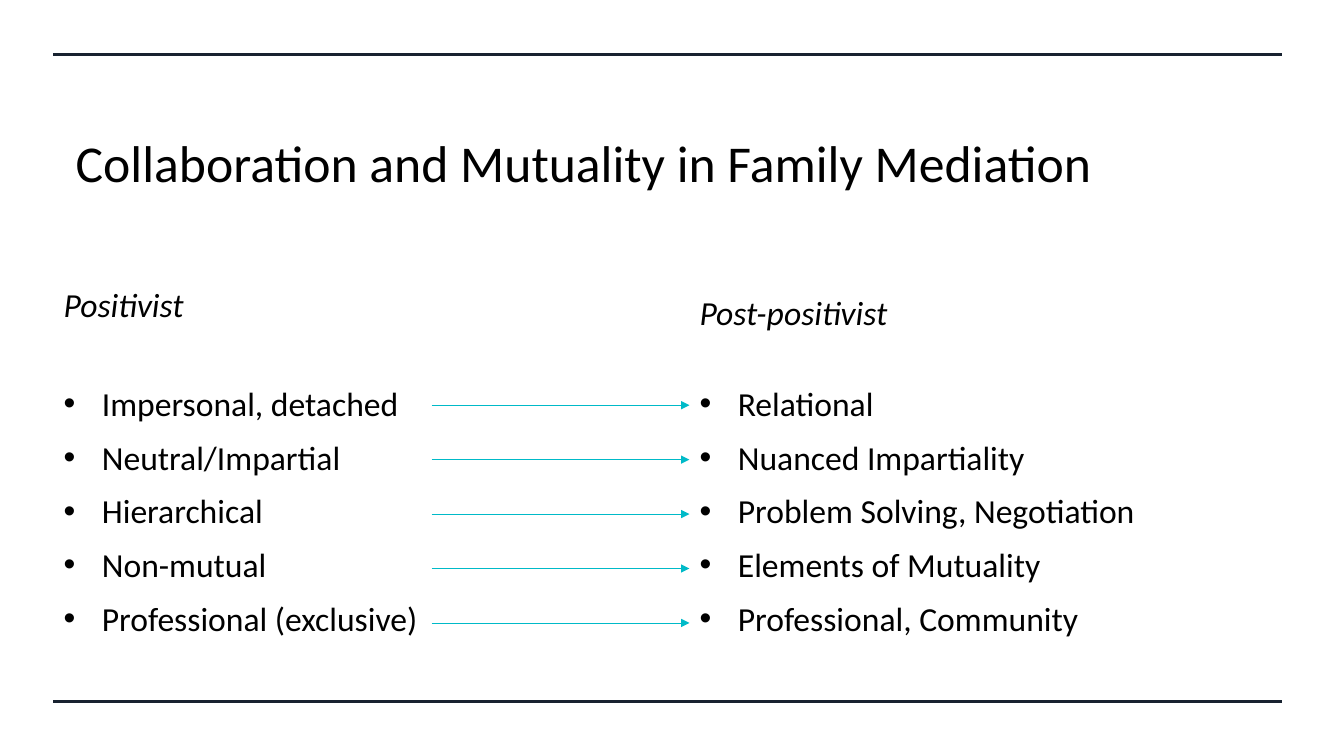
"""Build the slide comparing positivist and post-positivist family mediation."""
from lxml import etree
from pptx import Presentation, util as u
from pptx.dml.color import RGBColor
from pptx.enum import shapes, text
from pptx.oxml.ns import qn

INK = {"text": "000000", "rule": "182230", "arrow": "00BAC8"}
LEFT, RIGHT, END = 3.98, 51.3, 95.42
HEAD, LIST = 12, 40.27

deck = Presentation()
deck.slide_width, deck.slide_height = u.Inches(13.33), u.Inches(7.5)
col, row = deck.slide_width / 100, deck.slide_height / 100
slide = deck.slides.add_slide(deck.slide_layouts[4])
holes = {hole.placeholder_format.idx: hole for hole in slide.placeholders}


def write(hole, box, lines, size, slant=False, mark=False):
    x, y, wide, high = box
    hole.left, hole.top = int(x * col), int(y * row)
    hole.width, hole.height = int(wide * col), int(high * row)
    frame = hole.text_frame
    frame.word_wrap = True
    frame.auto_size = text.MSO_AUTO_SIZE.NONE
    frame.vertical_anchor = text.MSO_ANCHOR.TOP
    for i, line in enumerate(lines):
        para = frame.add_paragraph() if i else frame.paragraphs[0]
        if mark:
            props = para._p.get_or_add_pPr()
            props.set("marL", str(u.Inches(0.38)))
            props.set("indent", str(-u.Inches(0.38)))
            etree.SubElement(props, qn("a:buFont")).set("typeface", "Arial")
            etree.SubElement(props, qn("a:buChar")).set("char", "•")
        para.alignment = text.PP_ALIGN.LEFT
        para.space_before = u.Pt(9.5 if i else 0)
        run = para.add_run()
        run.text = line
        font = run.font
        font.name, font.size = "Calibri", u.Pt(size)
        font.bold, font.italic = False, slant
        font.color.rgb = RGBColor.from_string(INK["text"])
    return frame


def rule(x, end, y, tint, thick):
    line = slide.shapes.add_connector(
        shapes.MSO_CONNECTOR.STRAIGHT,
        int(x * col), int(y * row), int(end * col), int(y * row))
    line.line.color.rgb = RGBColor.from_string(INK[tint])
    line.line.width = u.Pt(thick)
    etree.SubElement(line._element.spPr, qn("a:effectLst"))
    return line


for y in (7.2, 92.8):
    rule(LEFT, END, y, "rule", 2.25)

title = write(holes[0], (LEFT, 14.27, END - LEFT, 19.47),
              ["Collaboration and Mutuality in Family Mediation"], 36.9)
title.vertical_anchor = text.MSO_ANCHOR.BOTTOM
title.margin_left, title.margin_bottom = u.Inches(0.22), u.Inches(0.61)
title.paragraphs[0].line_spacing = 0.9

sides = [
    (1, LEFT, 36.93, 43.89, "Positivist",
     ["Impersonal, detached", "Neutral/Impartial", "Hierarchical",
      "Non-mutual", "Professional (exclusive)"]),
    (3, RIGHT, 38, 44.11, "Post-positivist",
     ["Relational", "Nuanced Impartiality", "Problem Solving, Negotiation",
      "Elements of Mutuality", "Professional, Community"]),
]
for idx, x, y, wide, head, points in sides:
    write(holes[idx], (x, y, wide, HEAD), [head], 24, slant=True)
    write(holes[idx + 1], (x, 50, wide, LIST), points, 24, mark=True)

for i in range(len(points)):
    arrow = rule(32.11, RIGHT, 53.6 + 7.2 * i, "arrow", 0.5)
    tip = etree.SubElement(arrow.line._get_or_add_ln(), qn("a:tailEnd"))
    tip.set("type", "triangle")

deck.save("out.pptx")
